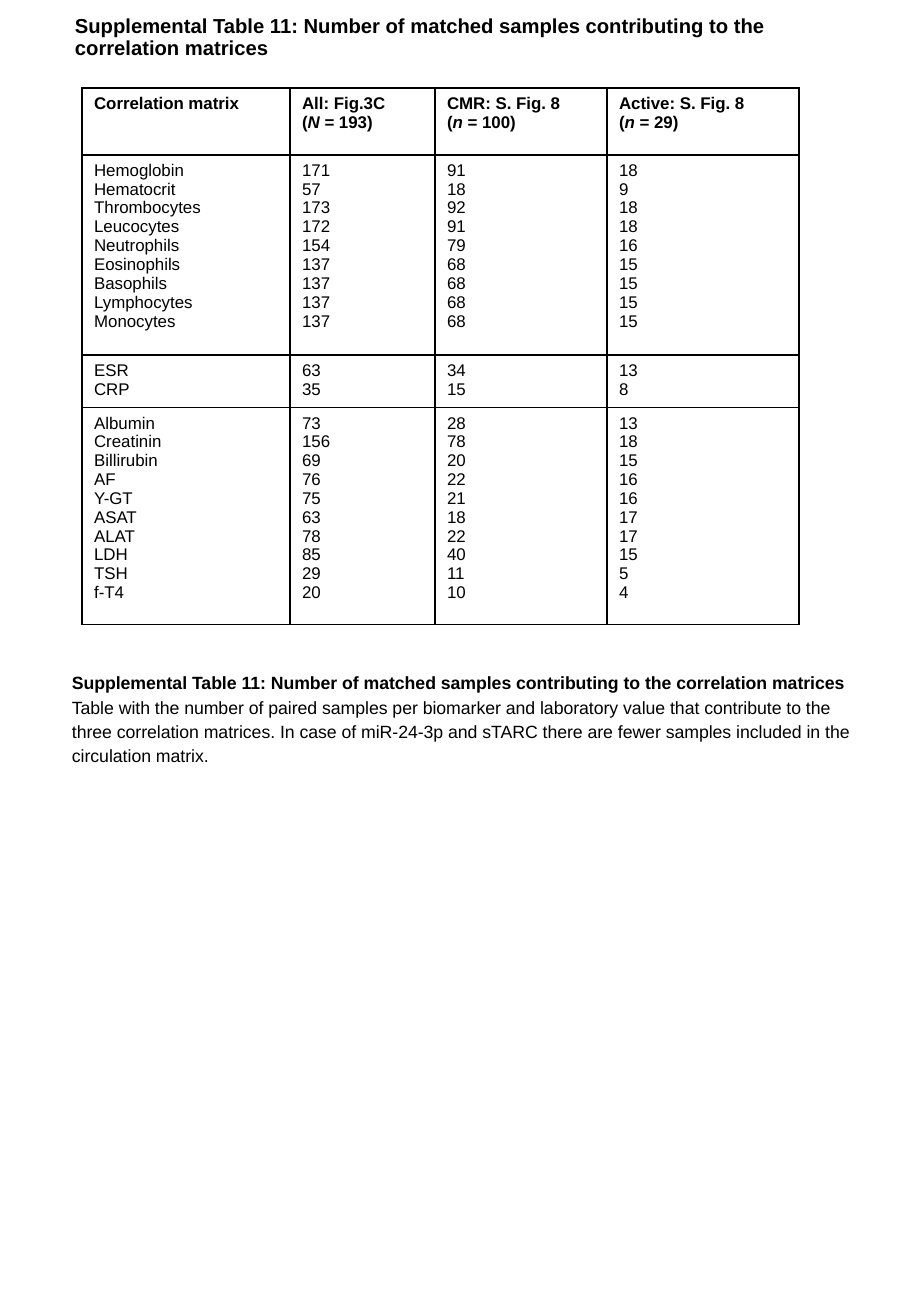
from lxml.etree import SubElement
from pptx import Presentation
from pptx.dml.color import RGBColor
from pptx.enum.text import MSO_ANCHOR as Anchor
from pptx.oxml import parse_xml
from pptx.oxml.ns import nsdecls, qn
from pptx.util import Emu, Pt

EMU_PER_PX = 7526
FONT = "Arial"
COLORS = {"ink": "000000", "paper": "FFFFFF"}

TITLE = ("Supplemental Table 11: Number of matched samples "
         "contributing to the correlation matrices")
CAPTION = ("Table with the number of paired samples per biomarker and laboratory value "
           "that contribute to the three correlation matrices. In case of miR-24-3p and "
           "sTARC there are fewer samples included in the circulation matrix.")

COLUMN_WIDTHS = [208, 145, 172, 192]
ROW_HEIGHTS = [67, 200, 50, 217]
# Runs between asterisks are italic.
HEADERS = [
    ["Correlation matrix"],
    ["All: Fig.3C", "(*N *= 193)"],
    ["CMR: S. Fig. 8", "(*n* = 100)"],
    ["Active: S. Fig. 8", "(*n* = 29)"],
]
BLOOD_COUNT = [
    ("Hemoglobin", 171, 91, 18),
    ("Hematocrit", 57, 18, 9),
    ("Thrombocytes", 173, 92, 18),
    ("Leucocytes", 172, 91, 18),
    ("Neutrophils", 154, 79, 16),
    ("Eosinophils", 137, 68, 15),
    ("Basophils", 137, 68, 15),
    ("Lymphocytes", 137, 68, 15),
    ("Monocytes", 137, 68, 15),
]
INFLAMMATION = [
    ("ESR", 63, 34, 13),
    ("CRP", 35, 15, 8),
]
CHEMISTRY = [
    ("Albumin", 73, 28, 13),
    ("Creatinin", 156, 78, 18),
    ("Billirubin", 69, 20, 15),
    ("AF", 76, 22, 16),
    ("Y-GT", 75, 21, 16),
    ("ASAT", 63, 18, 17),
    ("ALAT", 78, 22, 17),
    ("LDH", 85, 40, 15),
    ("TSH", 29, 11, 5),
    ("f-T4", 20, 10, 4),
]


def px(length):
    return Emu(length * EMU_PER_PX)


def add_run(paragraph, text, size=10, bold=False, italic=False, color="ink"):
    run = paragraph.add_run()
    run.text = text
    font = run.font
    font.name, font.size, font.bold, font.italic = FONT, Pt(size), bold, italic
    font.color.rgb = RGBColor.from_string(COLORS[color])


def add_text_box(slide, left, top, width, height, anchor, line_spacing):
    shape = slide.shapes.add_textbox(px(left), px(top), px(width), px(height))
    frame = shape.text_frame
    frame.word_wrap = True
    frame.vertical_anchor = anchor
    paragraph = frame.paragraphs[0]
    paragraph.line_spacing = line_spacing
    return paragraph


def set_borders(cell, width=1):
    properties = cell._tc.get_or_add_tcPr()
    for index, side in enumerate("LRTB"):
        line = parse_xml(f'<a:ln{side} {nsdecls("a")} w="{Pt(width)}"/>')
        fill = SubElement(line, qn("a:solidFill"))
        SubElement(fill, qn("a:srgbClr"), val=COLORS["ink"])
        properties.insert(index, line)


def fill_cell(cell, lines, bold):
    cell.fill.solid()
    cell.fill.fore_color.rgb = RGBColor.from_string(COLORS["paper"])
    set_borders(cell)
    frame = cell.text_frame
    for index, line in enumerate(lines):
        paragraph = frame.add_paragraph() if index else frame.paragraphs[0]
        for part, text in enumerate(str(line).split("*")):
            add_run(paragraph, text, bold=bold, italic=part % 2 == 1)


def add_sample_table(slide, left, top):
    rows = [HEADERS] + [list(zip(*group)) for group in (BLOOD_COUNT, INFLAMMATION, CHEMISTRY)]
    table = slide.shapes.add_table(
        len(rows), len(COLUMN_WIDTHS), px(left), px(top),
        px(sum(COLUMN_WIDTHS)), px(sum(ROW_HEIGHTS))).table
    table.first_row = table.horz_banding = False
    for column, width in zip(table.columns, COLUMN_WIDTHS):
        column.width = px(width)
    for row_index, (row, height) in enumerate(zip(rows, ROW_HEIGHTS)):
        table.rows[row_index].height = px(height)
        for column_index, lines in enumerate(row):
            fill_cell(table.cell(row_index, column_index), lines, bold=row_index == 0)


def main():
    presentation = Presentation()
    presentation.slide_width, presentation.slide_height = px(911), px(1316)
    slide = presentation.slides.add_slide(presentation.slide_layouts[6])

    title = add_text_box(slide, 63, -12, 786, 100, Anchor.MIDDLE, 0.9)
    add_run(title, TITLE, size=12, bold=True)

    add_sample_table(slide, 82, 88)

    caption = add_text_box(slide, 60, 663, 804, 109, Anchor.TOP, 1.15)
    caption.space_after = Pt(10)
    add_run(caption, TITLE, size=10.5, bold=True)
    caption.add_line_break()
    add_run(caption, CAPTION, size=10.5)

    presentation.save("out.pptx")


if __name__ == "__main__":
    main()
